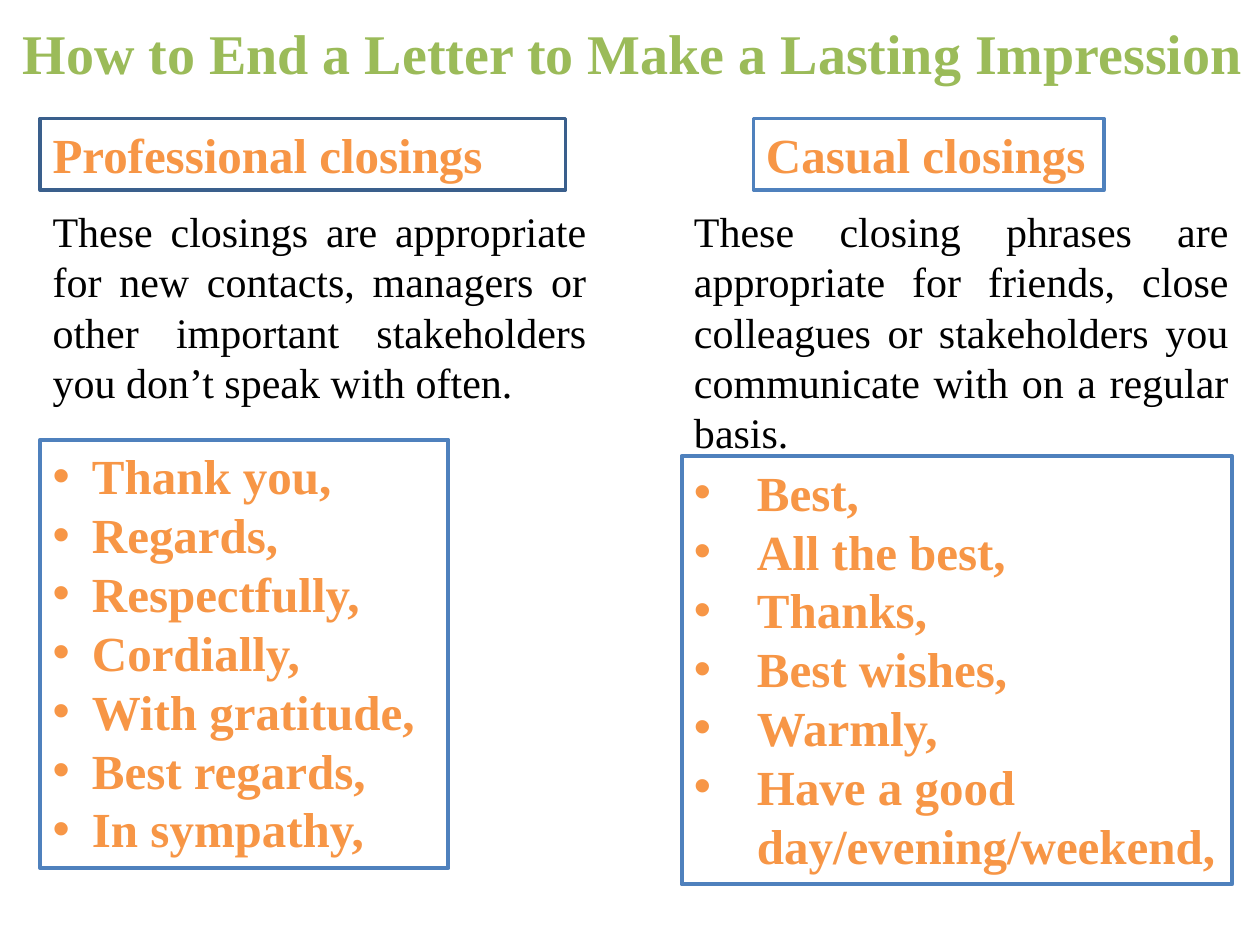
from pptx import Presentation
from pptx.dml.color import RGBColor
from pptx.enum.shapes import MSO_SHAPE
from pptx.enum.text import MSO_ANCHOR, PP_ALIGN
from pptx.oxml.xmlchemy import OxmlElement
from pptx.util import Pt

COLORS = {"title": "9BBB59", "accent": "F79646", "body": "000000",
          "border": "4F81BD", "dark_border": "3A5F8C"}
FONT = "Times New Roman"

presentation = Presentation()
presentation.slide_width, presentation.slide_height = Pt(720), Pt(540)
slide = presentation.slides.add_slide(presentation.slide_layouts[6])


def add_text(box, lines, size, color, bold=True, border=None, line_width=2,
             align=PP_ALIGN.LEFT, indent=0):
    position = [Pt(length) for length in box]
    if border:
        shape = slide.shapes.add_shape(MSO_SHAPE.RECTANGLE, *position)
        shape.shadow.inherit = False
        shape.fill.background()
        shape.line.color.rgb = RGBColor.from_string(COLORS[border])
        shape.line.width = Pt(line_width)
    else:
        shape = slide.shapes.add_textbox(*position)
    text_frame = shape.text_frame
    text_frame.word_wrap = True
    text_frame.vertical_anchor = MSO_ANCHOR.TOP
    text_frame.text = "\n".join(lines)
    for paragraph in text_frame.paragraphs:
        paragraph.alignment = align
        font = paragraph.runs[0].font
        font.name, font.size, font.bold = FONT, Pt(size), bold
        font.color.rgb = RGBColor.from_string(COLORS[color])
        if indent:
            properties = paragraph._p.get_or_add_pPr()
            properties.set("marL", str(Pt(indent)))
            properties.set("indent", str(-Pt(indent)))
            bullet_font = OxmlElement("a:buFont")
            bullet_font.set("typeface", "Arial")
            bullet = OxmlElement("a:buChar")
            bullet.set("char", "•")
            properties.extend([bullet_font, bullet])


columns = [
    {
        "heading": "Professional closings",
        "heading_box": (23, 67.7, 300.2, 41),
        "border": "dark_border",
        "description": "These closings are appropriate for new contacts, managers "
                       "or other important stakeholders you don’t speak with often.",
        "description_box": (23, 113.8, 319.3, 181.4),
        "closings": ["Thank you,", "Regards,", "Respectfully,", "Cordially,",
                     "With gratitude,", "Best regards,", "In sympathy,"],
        "closings_box": (23, 251.3, 233.3, 244.8),
        "indent": 22.5,
    },
    {
        "heading": "Casual closings",
        "heading_box": (430.6, 67.7, 200.2, 41),
        "border": "border",
        "description": "These closing phrases are appropriate for friends, close "
                       "colleagues or stakeholders you communicate with on a "
                       "regular basis.",
        "description_box": (389.5, 113.8, 319.7, 211),
        "closings": ["Best,", "All the best,", "Thanks,", "Best wishes,",
                     "Warmly,", "Have a good day/evening/weekend,"],
        "closings_box": (389.5, 260.6, 314.6, 244.8),
        "indent": 36,
    },
]

for column in columns:
    add_text(column["heading_box"], [column["heading"]], 28, "accent",
             border=column["border"])
    add_text(column["description_box"], [column["description"]], 24, "body",
             bold=False, align=PP_ALIGN.JUSTIFY)

add_text((5.8, 7.2, 714.2, 46), ["How to End a Letter to Make a Lasting Impression"],
         32, "title")

for column in columns:
    add_text(column["closings_box"], column["closings"], 28, "accent",
             border="border", line_width=2.25, indent=column["indent"])

presentation.save("out.pptx")
